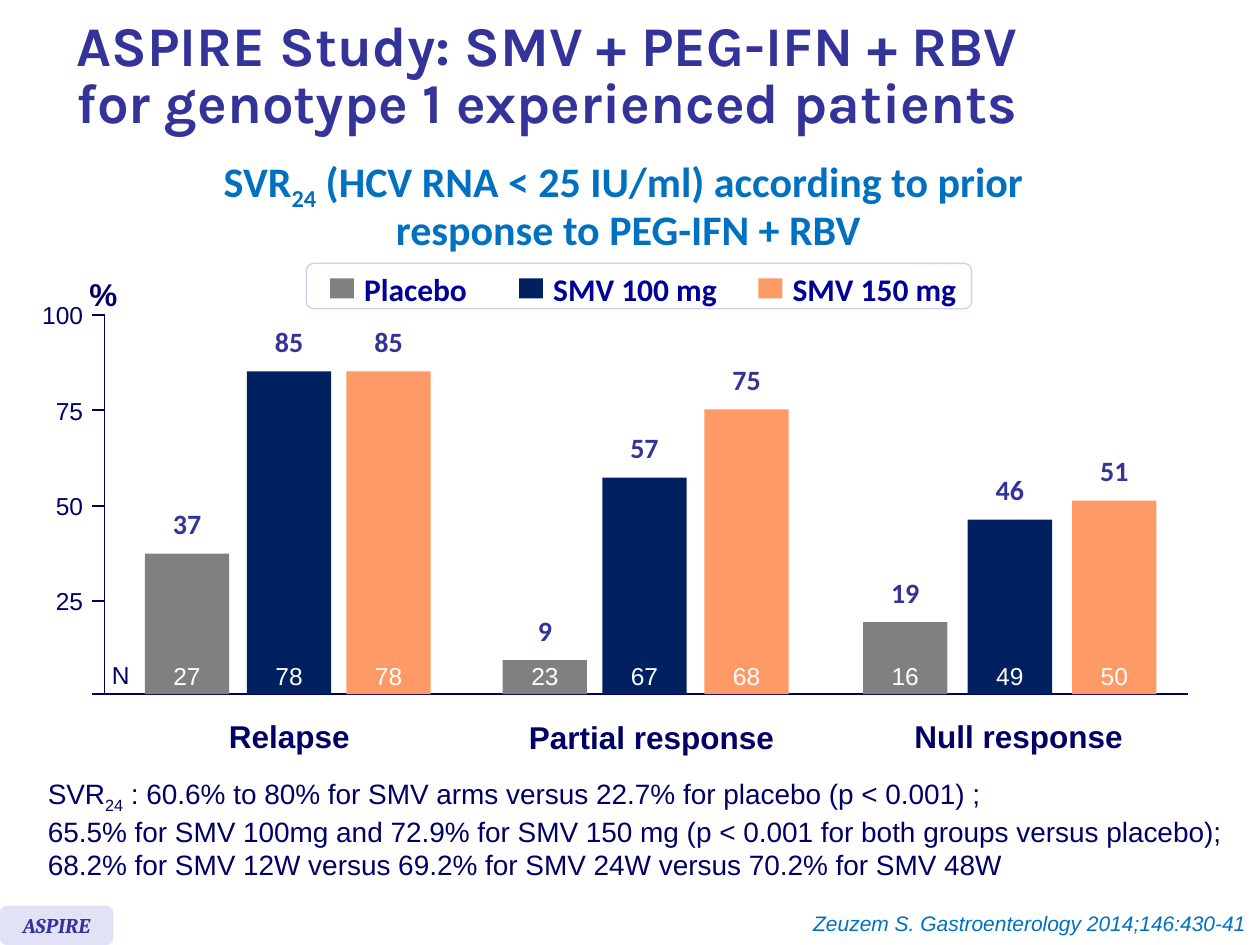
from lxml import etree
from pptx import Presentation
from pptx.dml.color import RGBColor
from pptx.enum.shapes import MSO_CONNECTOR, MSO_SHAPE
from pptx.enum.text import MSO_ANCHOR, MSO_AUTO_SIZE, PP_ALIGN
from pptx.oxml.ns import qn
from pptx.util import Pt

LEFT, CENTER, RIGHT = PP_ALIGN.LEFT, PP_ALIGN.CENTER, PP_ALIGN.RIGHT
TOP, MIDDLE = MSO_ANCHOR.TOP, MSO_ANCHOR.MIDDLE
FIT, NO_FIT = MSO_AUTO_SIZE.SHAPE_TO_FIT_TEXT, MSO_AUTO_SIZE.NONE
RECT, ROUNDED = MSO_SHAPE.RECTANGLE, MSO_SHAPE.ROUNDED_RECTANGLE
STRAIGHT = MSO_CONNECTOR.STRAIGHT

NAVY, INDIGO, BLUE, WHITE = "000066", "333399", "0070C0", "FFFFFF"
PLAIN = {"name": "Arial", "size": 14, "color": NAVY}
HEADING = {**PLAIN, "size": 18, "bold": True}
BODY = {**PLAIN, "size": 16}
COUNT = {**PLAIN, "color": WHITE}
CITATION = {"name": "Arial", "size": 12, "color": BLUE, "italic": True}
TAG = {"name": "Cambria", "size": 12, "color": INDIGO, "bold": True, "italic": True}
TITLE = {"name": "Karla", "size": 32, "color": INDIGO, "bold": True}
SUBTITLE = {"name": "Calibri", "size": 24, "color": BLUE, "bold": True}
VALUE = {"name": "Calibri", "size": 16, "color": INDIGO, "bold": True}
LEGEND = {"name": "Calibri", "size": 18, "color": "000099", "bold": True}

SUB = "sub:"   # marks a subscript span
BREAK = "\n"   # marks a line break

BASELINE, AXIS_TOP, AXIS_X = 396.7, 180, 59.8
POINTS_PER_PERCENT = 2.17
TICK_STEP = 54.5
BAR_WIDTH = 48.2

# name, colour, swatch left, label width
ARMS = [
    ("Placebo", "808080", 188.6, 74.2),
    ("SMV 100 mg", "002060", 296.6, 109.4),
    ("SMV 150 mg", "FF9966", 433.4, 109.4),
]
# name, label left, label top, label width, bars as (left, percent, patients)
RESPONSES = [
    ("Relapse", 123.8, 406.1, 84.2, [(82.8, 37, 27), (141.1, 85, 78), (198, 85, 78)]),
    ("Partial response", 295.2, 406.8, 156.2, [(287.3, 9, 23), (344.2, 57, 67), (402.5, 75, 68)]),
    ("Null response", 515.5, 406.1, 134.6, [(493.2, 19, 16), (553, 46, 49), (612.7, 51, 50)]),
]


def rgb(value):
    return RGBColor.from_string(value)


class Painter:
    """Draws styled elements on the current page; all lengths are in points."""

    def __init__(self, page):
        self.page = page

    def shape(self, kind, left, top, width, height, fill, line=None):
        shape = self.page.shapes.add_shape(kind, Pt(left), Pt(top), Pt(width), Pt(height))
        shape.shadow.inherit = False
        shape.fill.solid()
        shape.fill.fore_color.rgb = rgb(fill)
        if line:
            shape.line.color.rgb = rgb(line)
            shape.line.width = Pt(0.75)
        else:
            shape.line.fill.background()
        return shape

    def line(self, x1, y1, x2, y2):
        line = self.page.shapes.add_connector(STRAIGHT, Pt(x1), Pt(y1), Pt(x2), Pt(y2))
        line.line.color.rgb = rgb(NAVY)
        line.line.width = Pt(1)
        etree.SubElement(line._element.spPr, qn("a:effectLst"))

    def text(self, left, top, width, height, paras, style, **options):
        box = self.page.shapes.add_textbox(Pt(left), Pt(top), Pt(width), Pt(height))
        self.fill_text(box, paras, style, **options)

    def fill_text(self, box, paras, style, align=LEFT, anchor=TOP, wrap=False,
                  fit=FIT, inset=(7.2, 3.6), spacing=None):
        """Fill a box; each paragraph is a string or a list of spans."""
        frame = box.text_frame
        across, down = map(Pt, inset)
        settings = {"word_wrap": wrap, "auto_size": fit, "vertical_anchor": anchor,
                    "margin_left": across, "margin_right": across,
                    "margin_top": down, "margin_bottom": down}
        for name, value in settings.items():
            setattr(frame, name, value)
        for index, spans in enumerate(paras):
            para = frame.add_paragraph() if index else frame.paragraphs[0]
            para.alignment = align
            if spacing:
                para.line_spacing = spacing
            for content in [spans] if isinstance(spans, str) else spans:
                self.span(para, content, style)

    def span(self, para, content, style):
        if content == BREAK:
            para.add_line_break()
            return
        span = para.add_run()
        span.text = content.removeprefix(SUB)
        for name, value in style.items():
            if name == "color":
                span.font.color.rgb = rgb(value)
            else:
                setattr(span.font, name, Pt(value) if name == "size" else value)
        if content.startswith(SUB):
            span._r.get_or_add_rPr().set("baseline", "-25000")

    def bar(self, left, percent, patients, color):
        height = percent * POINTS_PER_PERCENT
        top = BASELINE - height
        self.shape(RECT, left, top, BAR_WIDTH, height, color)
        label_left = left + BAR_WIDTH / 2 - 15.3
        self.text(label_left, top - 34, 30.6, 34, [str(percent)], VALUE,
                  align=CENTER, inset=(7.2, 7.2))
        self.text(label_left, 374.4, 30.6, 24.5, [str(patients)], COUNT, align=CENTER)


def draw_axes(painter):
    painter.line(AXIS_X, AXIS_TOP, AXIS_X, BASELINE)
    painter.line(52.6, BASELINE, 679, BASELINE)
    for index, percent in enumerate((100, 75, 50, 25)):
        y = AXIS_TOP + index * TICK_STEP
        painter.line(52.6, y, AXIS_X, y)
        painter.text(23.5, y - 8.6, 24, 17.2, [str(percent)], PLAIN,
                     align=RIGHT, anchor=MIDDLE, inset=(0, 0))
    painter.text(44, 153.4, 30.2, 28.8, ["%"], HEADING)
    painter.text(56.9, 373.7, 24.5, 24.5, ["N"], PLAIN)


def draw_legend(painter):
    painter.shape(ROUNDED, 175, 150.5, 380.2, 26, WHITE, "D0D0F0")
    for name, color, left, width in ARMS:
        painter.shape(RECT, left, 159.1, 13.7, 11.5, color)
        painter.text(left + 12.4, 150.5, width, 28.8, [name], LEGEND)


def main():
    deck = Presentation()
    deck.slide_width, deck.slide_height = Pt(720), Pt(540)
    painter = Painter(deck.slides.add_slide(deck.slide_layouts[6]))

    painter.text(36.7, 5.8, 657.4, 77,
                 [["ASPIRE Study: SMV + PEG-IFN + RBV ", BREAK,
                   "for genotype 1 experienced patients"]],
                 TITLE, anchor=MIDDLE, wrap=True, fit=NO_FIT, spacing=0.85)
    painter.text(117.4, 94.3, 483.1, 56.2,
                 [["SVR", SUB + "24", " (HCV RNA < 25 IU/ml) according to prior "],
                  "response to PEG-IFN + RBV"],
                 SUBTITLE, align=CENTER, spacing=Pt(23.6))

    draw_legend(painter)
    draw_axes(painter)
    for name, left, top, width, bars in RESPONSES:
        for (bar_left, percent, patients), (_, color, *_) in zip(bars, ARMS):
            painter.bar(bar_left, percent, patients, color)
        painter.text(left, top, width, 28.8, [name], HEADING)

    painter.text(20.2, 439.9, 691.9, 78.5,
                 [["SVR", SUB + "24",
                   " : 60.6% to 80% for SMV arms versus 22.7% for placebo (p < 0.001) ;"],
                  "65.5% for SMV 100mg and 72.9% for SMV 150 mg "
                  "(p < 0.001 for both groups versus placebo);",
                  "68.2% for SMV 12W versus 69.2% for SMV 24W versus 70.2% for SMV 48W"],
                 BODY, wrap=True)
    tag = painter.shape(ROUNDED, 0, 517.7, 64.8, 22.3, "E2E2F6")
    painter.fill_text(tag, ["ASPIRE"], TAG, align=CENTER, anchor=MIDDLE, fit=NO_FIT)
    painter.text(450, 517, 269.3, 21.6, ["Zeuzem S. Gastroenterology 2014;146:430-41"],
                 CITATION, align=RIGHT)

    deck.save("out.pptx")


if __name__ == "__main__":
    main()
